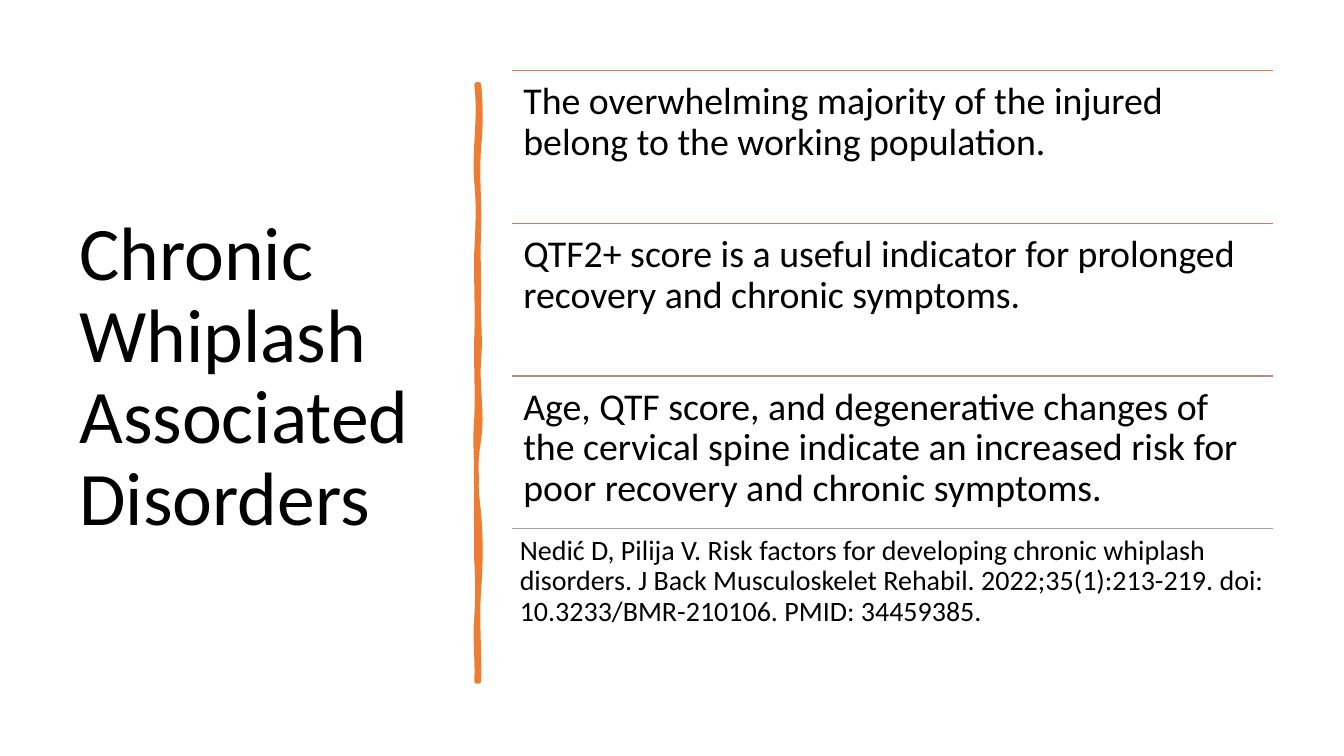
from lxml.etree import SubElement
from pptx import Presentation
from pptx.dml.color import RGBColor
from pptx.enum.shapes import MSO_CONNECTOR
from pptx.enum.text import MSO_ANCHOR
from pptx.oxml.ns import qn
from pptx.util import Cm, Pt

BLACK = RGBColor(0x00, 0x00, 0x00)
ORANGE = RGBColor(0xED, 0x7D, 0x31)
CLAY = RGBColor(0xD1, 0x7B, 0x5C)
MAUVE = RGBColor(0xB9, 0x8A, 0x82)
GREY = RGBColor(0xA5, 0xA5, 0xA5)

# Rule colour, text, size in points, inset in cm
ROWS = [
    (ORANGE, "The overwhelming majority of the injured belong to the "
     "working population.", 27, 0.29),
    (CLAY, "QTF2+ score is a useful indicator for prolonged recovery "
     "and chronic symptoms.", 27, 0.29),
    (MAUVE, "Age, QTF score, and degenerative changes of the cervical spine "
     "indicate an increased risk for poor recovery and chronic symptoms.",
     27, 0.29),
    (GREY, "Nedić D, Pilija V. Risk factors for developing chronic whiplash "
     "disorders. J Back Musculoskelet Rehabil. 2022;35(1):213-219. "
     "doi: 10.3233/BMR-210106. PMID: 34459385.", 20, 0.2),
]

# Brush edges in cm: end height of each curve and its two sideways pulls
RIGHT = [(1.57, 0.08, 0.08), (3.61, -0.03, 0.05), (5.33, 0, 0.03),
         (6.91, 0, 0.08), (8.94, -0.03, 0.13), (10.82, -0.08, -0.05),
         (12.7, 0.08, 0.08), (15.04, -0.03, 0.05)]
LEFT = [(13.44, 0, -0.08), (12.01, 0, 0), (9.98, -0.03, -0.05),
        (8.41, -0.03, -0.08), (6.38, 0, -0.05), (4.22, 0, -0.05),
        (2.46, 0, 0.03), (0, -0.1, 0.08)]
STEPS = 8


def add_text(slide, text, size, inset, left, top, width, height,
             anchor=MSO_ANCHOR.TOP):
    frame = slide.shapes.add_textbox(left, top, width, height).text_frame
    frame.word_wrap = True
    frame.vertical_anchor = anchor
    frame.margin_left = frame.margin_right = inset
    frame.margin_top = frame.margin_bottom = inset
    para = frame.paragraphs[0]
    para.text = text
    para.line_spacing = 0.9
    para.font.name = "Calibri"
    para.font.size = Pt(size)
    para.font.color.rgb = BLACK


def add_rule(slide, color, left, top, width):
    rule = slide.shapes.add_connector(
        MSO_CONNECTOR.STRAIGHT, left, top, left + width, top)
    rule.line.color.rgb = color
    rule.line.width = Pt(1)
    SubElement(rule._element.spPr, qn("a:effectLst"))


def trace(side, start, curves):
    """Points along a chain of curves whose ends all lie at x = side."""
    points = []
    for end, pull, push in curves:
        for step in range(1, STEPS + 1):
            t = step / STEPS
            u = 1 - t
            x = (side * (u ** 3 + t ** 3)
                 + 3 * u * t * (u * pull + t * push))
            points.append((x, start + (end - start) * t))
        start = end
    return points


def add_brush(slide, center, top):
    half, foot = 0.03, RIGHT[-1][0]
    points = (trace(half, 0, RIGHT) + [(-half, foot)]
              + trace(-half, foot, LEFT))
    pen = slide.shapes.build_freeform(center + Cm(half), top)
    pen.add_line_segments([(center + Cm(x), top + Cm(y)) for x, y in points])
    brush = pen.convert_to_shape()
    brush.shadow.inherit = False
    brush.fill.solid()
    brush.fill.fore_color.rgb = ORANGE
    brush.line.color.rgb = ORANGE
    brush.line.width = Pt(3.25)


def add_list(slide, left, top, width, height):
    pitch = height // len(ROWS)
    for index, (color, text, size, inset) in enumerate(ROWS):
        y = top + index * pitch
        add_rule(slide, color, left, y, width)
        add_text(slide, text, size, Cm(inset), left, y, width, pitch)


def main():
    deck = Presentation()
    deck.slide_width, deck.slide_height = Cm(33.87), Cm(19.05)
    slide = deck.slides.add_slide(deck.slide_layouts[6])

    # Title, divider, findings
    add_text(slide, "Chronic Whiplash Associated Disorders", 54, Cm(0.25),
             Cm(1.75), Cm(1.78), Cm(9.5), Cm(15.52), MSO_ANCHOR.MIDDLE)
    add_brush(slide, Cm(12.04), Cm(2.13))
    add_list(slide, Cm(12.9), Cm(1.78), Cm(19.18), Cm(15.38))
    deck.save("out.pptx")


if __name__ == "__main__":
    main()
